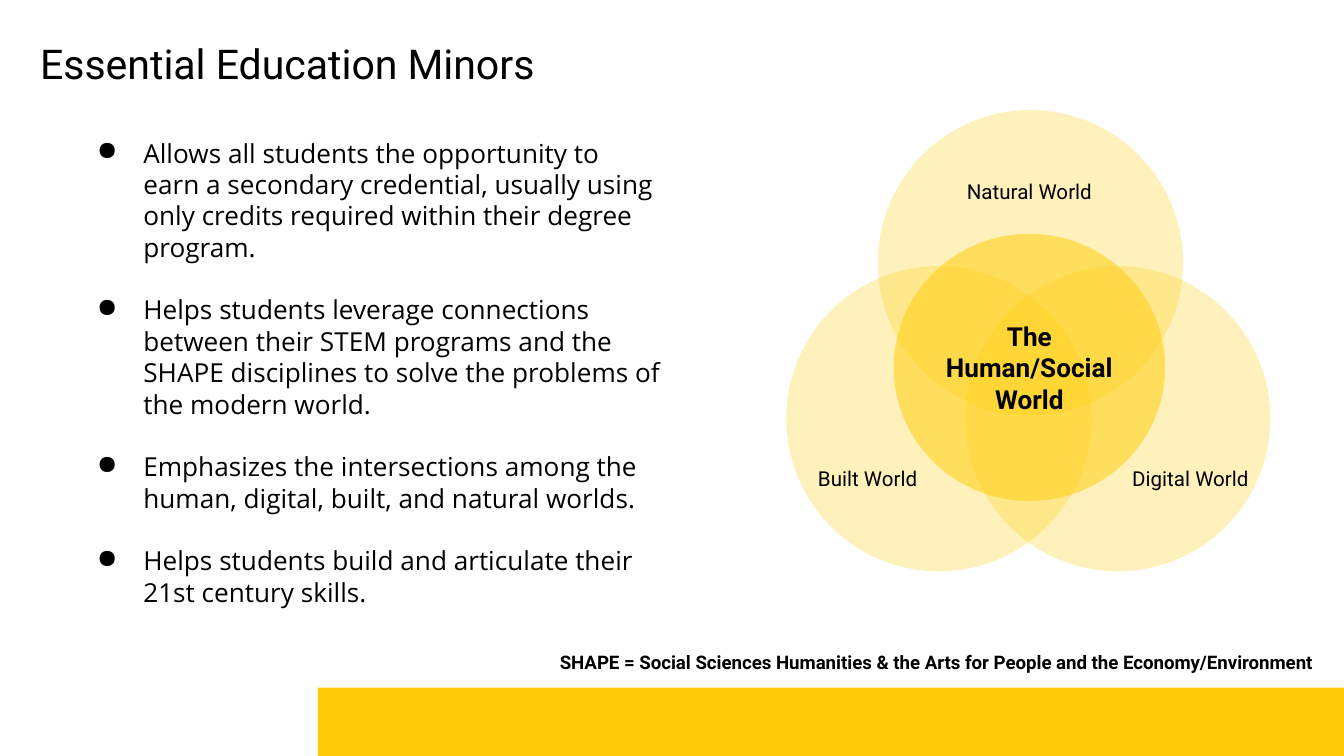
from lxml import etree
from pptx import Presentation
from pptx.dml.color import RGBColor as RGB
from pptx.enum.shapes import MSO_SHAPE as Kind
from pptx.enum.text import MSO_ANCHOR as Anchor, PP_ALIGN as Align
from pptx.oxml.ns import qn
from pptx.util import Cm, Pt

COLORS = {"gold": "FFCE09", "ink": "000000"}
STYLES = {
    "title": {"name": "Roboto", "size": Pt(22)},
    "body": {"name": "Open Sans", "size": Pt(14)},
    "label": {"name": "Roboto", "size": Pt(11)},
    "core": {"name": "Roboto", "size": Pt(14), "bold": True},
    "note": {"name": "Roboto", "size": Pt(10), "bold": True},
}
POINTS = [
    "Allows all students the opportunity to earn a secondary credential, "
    "usually using only credits required within their degree program.",
    "Helps students leverage connections between their STEM programs and the "
    "SHAPE disciplines to solve the problems of the modern world.",
    "Emphasizes the intersections among the human, digital, built, and natural worlds.",
    "Helps students build and articulate their 21st century skills.",
]
# Circle place, then label text, place, width and alignment, all in cm
WORLDS = [
    ((3.38, 2.95), "Digital World", (5.66, 6.12), 3.33, Align.RIGHT),
    ((0, 2.95), "Built World", (0.35, 6.12), 3.33, Align.LEFT),
    ((1.73, 0), "Natural World", (2.59, 0.69), 4.01, Align.CENTER),
]
SIZE = 5.77


def style(para, name):
    for key, value in STYLES[name].items():
        setattr(para.font, key, value)
    para.font.color.rgb = RGB.from_string(COLORS["ink"])


def write(frame, lines, name, align=Align.LEFT, inset=0.25):
    frame.word_wrap = True
    for side in ("left", "top", "right", "bottom"):
        setattr(frame, f"margin_{side}", Cm(inset))
    for i, line in enumerate(lines):
        para = frame.paragraphs[0] if i == 0 else frame.add_paragraph()
        para.text = line
        para.alignment = align
        style(para, name)


def add_text(slide, box, lines, name, align=Align.LEFT):
    frame = slide.shapes.add_textbox(*map(Cm, box)).text_frame
    write(frame, lines, name, align)
    return frame


def add_shape(slide, kind, box, alpha=100):
    shape = slide.shapes.add_shape(kind, *map(Cm, box))
    shape.shadow.inherit = False
    shape.fill.solid()
    shape.fill.fore_color.rgb = RGB.from_string(COLORS["gold"])
    shape.line.fill.background()
    if alpha < 100:
        tone = shape.fill._xPr.find(".//" + qn("a:srgbClr"))
        etree.SubElement(tone, qn("a:alpha"), val=str(alpha * 1000))
    return shape


def add_list(slide, box):
    frame = add_text(slide, box, POINTS, "body")
    for i, para in enumerate(frame.paragraphs):
        props = para._p.get_or_add_pPr()
        props.set("marL", str(Cm(1.27)))
        props.set("indent", str(-Cm(0.88)))
        mark = etree.Element(qn("a:buChar"), char="●")
        props.insert(0, mark)
        if i:
            para.space_before = Pt(16.8)


def add_venn(slide, left, top):
    # Outer worlds
    for (x, y), text, (dx, dy), width, align in WORLDS:
        add_shape(slide, Kind.OVAL, (left + x, top + y, SIZE, SIZE), 27)
        box = (left + dx, top + dy, width, 1.63)
        frame = add_text(slide, box, [text], "label", align)
        frame.vertical_anchor = Anchor.MIDDLE
        frame.paragraphs[0].line_spacing = 1.15
    # Shared core
    core = add_shape(slide, Kind.OVAL, (left + 2.03, top + 2.34, 5.13, 5.05), 52)
    core.text_frame.vertical_anchor = Anchor.MIDDLE
    write(core.text_frame, ["The Human/Social", "World"], "core", Align.CENTER, 0)


def main():
    deck = Presentation()
    deck.slide_width, deck.slide_height = Cm(25.4), Cm(14.29)
    slide = deck.slides.add_slide(deck.slide_layouts[6])
    # Bottom bar
    add_shape(slide, Kind.RECTANGLE, (6.01, 13, 19.39, 1.29))
    # Title, list and diagram
    add_text(slide, (0.51, 0.48, 13.56, 1.45), ["Essential Education Minors"], "title")
    add_list(slide, (1.19, 2.34, 11.58, 11.28))
    add_venn(slide, 14.86, 2.08)
    # Meaning of the short form
    note = "SHAPE = Social Sciences Humanities & the Arts for People and the Economy/Environment"
    add_text(slide, (10.33, 12.09, 15.65, 0.94), [note], "note")
    deck.save("out.pptx")


if __name__ == "__main__":
    main()
